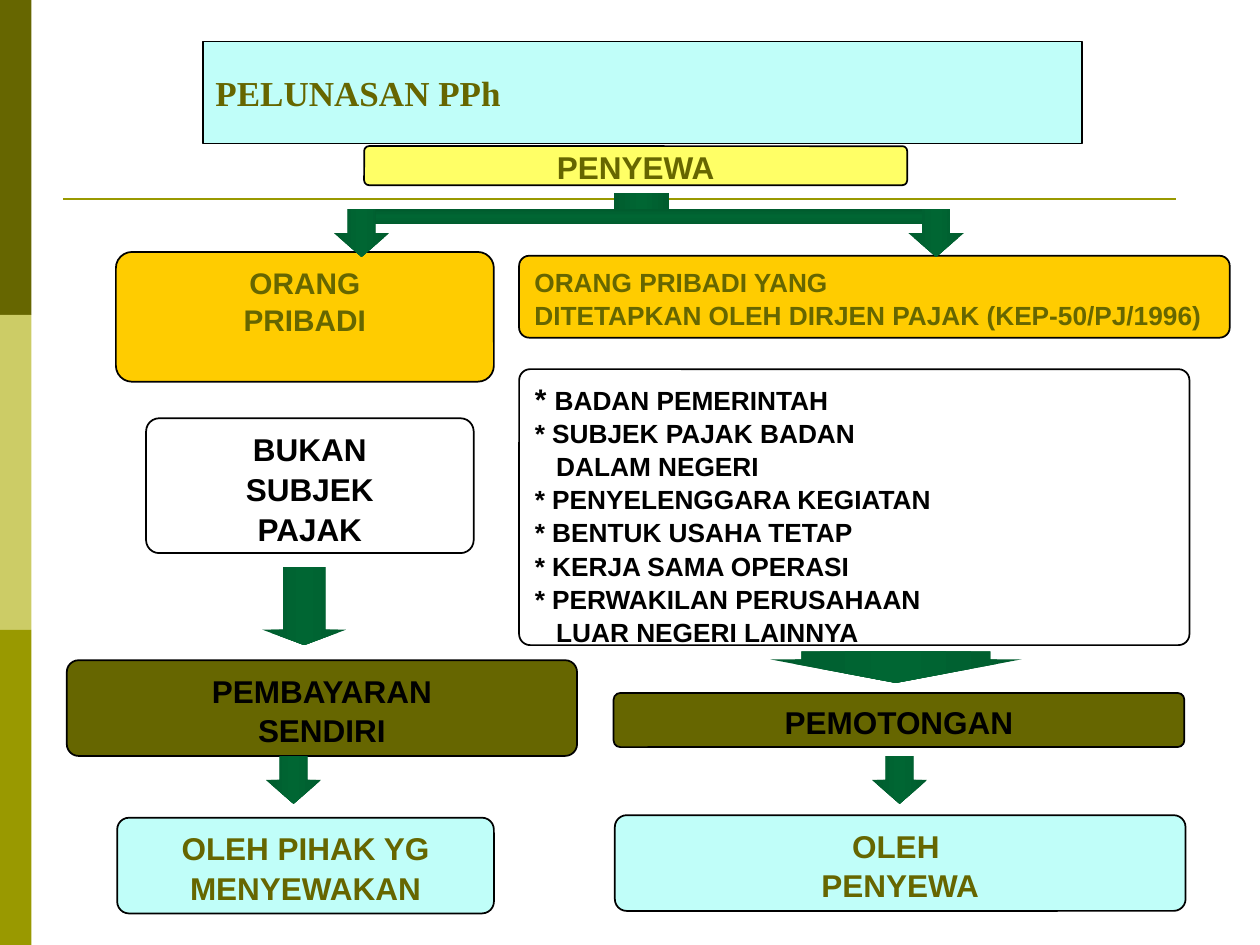
from copy import deepcopy
from dataclasses import dataclass

from lxml.etree import SubElement
from pptx import Presentation
from pptx.dml.color import RGBColor
from pptx.enum.shapes import MSO_CONNECTOR, MSO_SHAPE
from pptx.enum.text import MSO_ANCHOR, MSO_AUTO_SIZE, PP_ALIGN
from pptx.oxml.ns import qn
from pptx.util import Pt

PX = 9144  # 100 px to the inch


@dataclass(frozen=True)
class Theme:
    olive: str = "666600"
    moss: str = "999900"
    sage: str = "CCCC66"
    aqua: str = "C0FEF9"
    gold: str = "FFCC00"
    yellow: str = "FFFF66"
    white: str = "FFFFFF"
    black: str = "000000"
    green: str = "006633"
    dark_green: str = "005C2E"
    title_font: str = "Times New Roman"
    body_font: str = "Arial"
    title_size: int = 20
    large: int = 18
    medium: int = 17
    small: int = 15


THEME = Theme()


def px(*lengths):
    return [length * PX for length in lengths]


def color(value):
    return RGBColor.from_string(value)


def outline(shape):
    shape.line.color.rgb = color(THEME.black)
    shape.line.width = Pt(1)


def paint(shape, fill):
    shape.fill.solid()
    shape.fill.fore_color.rgb = color(fill)


def format_run(run, size, ink, font=THEME.body_font):
    for name, value in {"size": Pt(size), "name": font, "bold": True}.items():
        setattr(run.font, name, value)
    run.font.color.rgb = color(ink)


def format_frame(frame, anchor, wrap=True):
    settings = {
        "auto_size": MSO_AUTO_SIZE.NONE, "word_wrap": wrap, "vertical_anchor": anchor,
        "margin_left": 10 * PX, "margin_right": 10 * PX,
        "margin_top": 5 * PX, "margin_bottom": 5 * PX,
    }
    for name, value in settings.items():
        setattr(frame, name, value)


def add_plain_shape(slide, kind, box):
    shape = slide.shapes.add_shape(kind, *px(*box))
    shape.shadow.inherit = False
    shape.line.fill.background()
    return shape


def add_box(slide, box, fill, lines, size=THEME.large, ink=THEME.olive, align=PP_ALIGN.CENTER,
            radius=0.124, anchor=MSO_ANCHOR.TOP, wrap=True):
    """Rounded box with one paragraph for each line."""
    shape = add_plain_shape(slide, MSO_SHAPE.ROUNDED_RECTANGLE, box)
    shape.adjustments[0] = radius
    paint(shape, fill)
    outline(shape)
    frame = shape.text_frame
    format_frame(frame, anchor, wrap)
    for number, line in enumerate(lines):
        paragraph = frame.add_paragraph() if number else frame.paragraphs[0]
        paragraph.alignment = align
        paragraph.line_spacing = 1.05
        run = paragraph.add_run()
        run.text = line
        format_run(run, size, ink)
    return shape


def add_green_shape(slide, kind, box, adjustments=(), angle=0):
    shape = add_plain_shape(slide, kind, box)
    for index, value in enumerate(adjustments):
        shape.adjustments[index] = value
    shape.fill.gradient()
    shape.fill.gradient_angle = angle
    stop_list = shape.fill._xPr.find(".//" + qn("a:gsLst"))
    stop_list.insert(1, deepcopy(stop_list[0]))
    stops = zip(shape.fill.gradient_stops, (0, 0.5, 1),
                (THEME.dark_green, THEME.green, THEME.dark_green))
    for stop, position, value in stops:
        stop.position = position
        stop.color.rgb = color(value)


def add_arrow(slide, box, shaft=0.5, head=0.5):
    add_green_shape(slide, MSO_SHAPE.DOWN_ARROW, box, (shaft, head))


def add_backdrop(slide):
    for row, fill in enumerate((THEME.olive, THEME.sage, THEME.moss)):
        paint(add_plain_shape(slide, MSO_SHAPE.RECTANGLE, (0, 250 * row, 25, 250)), fill)
    rule = slide.shapes.add_connector(MSO_CONNECTOR.STRAIGHT, *px(50, 158, 933, 158))
    rule.line.color.rgb = color(THEME.moss)
    rule.line.width = Pt(1.5)
    SubElement(rule._element.spPr, qn("a:effectLst"))


def add_title(slide, box):
    title = slide.shapes.title
    title.left, title.top, title.width, title.height = px(*box)
    paint(title, THEME.aqua)
    outline(title)
    format_frame(title.text_frame, MSO_ANCHOR.MIDDLE)
    paragraph = title.text_frame.paragraphs[0]
    paragraph.alignment = PP_ALIGN.LEFT
    run = paragraph.add_run()
    run.text = "PELUNASAN PPh"
    format_run(run, THEME.title_size, THEME.olive, THEME.title_font)


def add_self_payment_column(slide, left, top):
    add_box(slide, (left + 39, top, 300, 103), THEME.gold, ("ORANG", "PRIBADI"), THEME.medium)
    add_box(slide, (left + 63, top + 132, 260, 107), THEME.white,
            ("BUKAN", "SUBJEK", "PAJAK"), ink=THEME.black, radius=0.097)
    add_arrow(slide, (left + 155, top + 250, 67, 62), head=0.2)
    add_box(slide, (left, top + 324, 405, 76), THEME.olive,
            ("PEMBAYARAN", "SENDIRI"), ink=THEME.black)
    add_arrow(slide, (left + 158, top + 400, 44, 38))
    add_box(slide, (left + 40, top + 449, 299, 76), THEME.aqua, ("OLEH PIHAK YG", "MENYEWAKAN"))


def add_withholding_column(slide, left, top):
    add_box(slide, (left, top + 3, 564, 65), THEME.gold,
            ("ORANG PRIBADI YANG", "DITETAPKAN OLEH DIRJEN PAJAK (KEP-50/PJ/1996)"),
            THEME.small, align=PP_ALIGN.LEFT)
    add_withholder_list(slide, (left, top + 93, 532, 219))
    add_arrow(slide, (left + 199, top + 317, 200, 25), 0.75, 0.75)
    add_box(slide, (left + 75, top + 350, 453, 43), THEME.olive,
            ("PEMOTONGAN",), ink=THEME.black)
    add_arrow(slide, (left + 280, top + 400, 44, 38))
    add_box(slide, (left + 76, top + 447, 453, 76), THEME.aqua, ("OLEH ", "PENYEWA"))


def add_withholder_list(slide, box):
    lines = ("BADAN PEMERINTAH", "* SUBJEK PAJAK BADAN", "DALAM NEGERI",
             "* PENYELENGGARA KEGIATAN", "* BENTUK USAHA TETAP", "* KERJA SAMA OPERASI",
             "* PERWAKILAN PERUSAHAAN", "LUAR NEGERI LAINNYA")
    shape = add_box(slide, box, THEME.white, lines, THEME.small, THEME.black,
                    PP_ALIGN.LEFT, radius=0.04)
    first, *others = shape.text_frame.paragraphs
    star, name = first.runs[0], first.add_run()
    star.text, name.text = "* ", lines[0]
    format_run(star, THEME.medium, THEME.black)
    format_run(name, THEME.small, THEME.black)
    for paragraph in others:
        if not paragraph.text.startswith("*"):
            paragraph._p.get_or_add_pPr().set("marL", str(17 * PX))


def add_fork(slide, left, top):
    """Stem and crossbar that end in an arrow at each side."""
    add_green_shape(slide, MSO_SHAPE.RECTANGLE, (left + 11, top + 13, 467, 12), angle=90)
    for offset in (0, 456):
        add_arrow(slide, (left + offset, top + 13, 44, 38))
    add_green_shape(slide, MSO_SHAPE.RECTANGLE, (left + 222, top, 44, 13))


def main():
    presentation = Presentation()
    presentation.slide_width, presentation.slide_height = px(1000, 750)
    slide = presentation.slides.add_slide(presentation.slide_layouts[5])
    add_backdrop(slide)
    add_title(slide, (161, 33, 698, 81))
    add_self_payment_column(slide, 53, 200)
    add_withholding_column(slide, 412, 200)
    add_fork(slide, 265, 153)
    add_box(slide, (289, 116, 431, 31), THEME.yellow, ("PENYEWA",),
            anchor=MSO_ANCHOR.MIDDLE, wrap=False)
    presentation.save("out.pptx")


if __name__ == "__main__":
    main()
